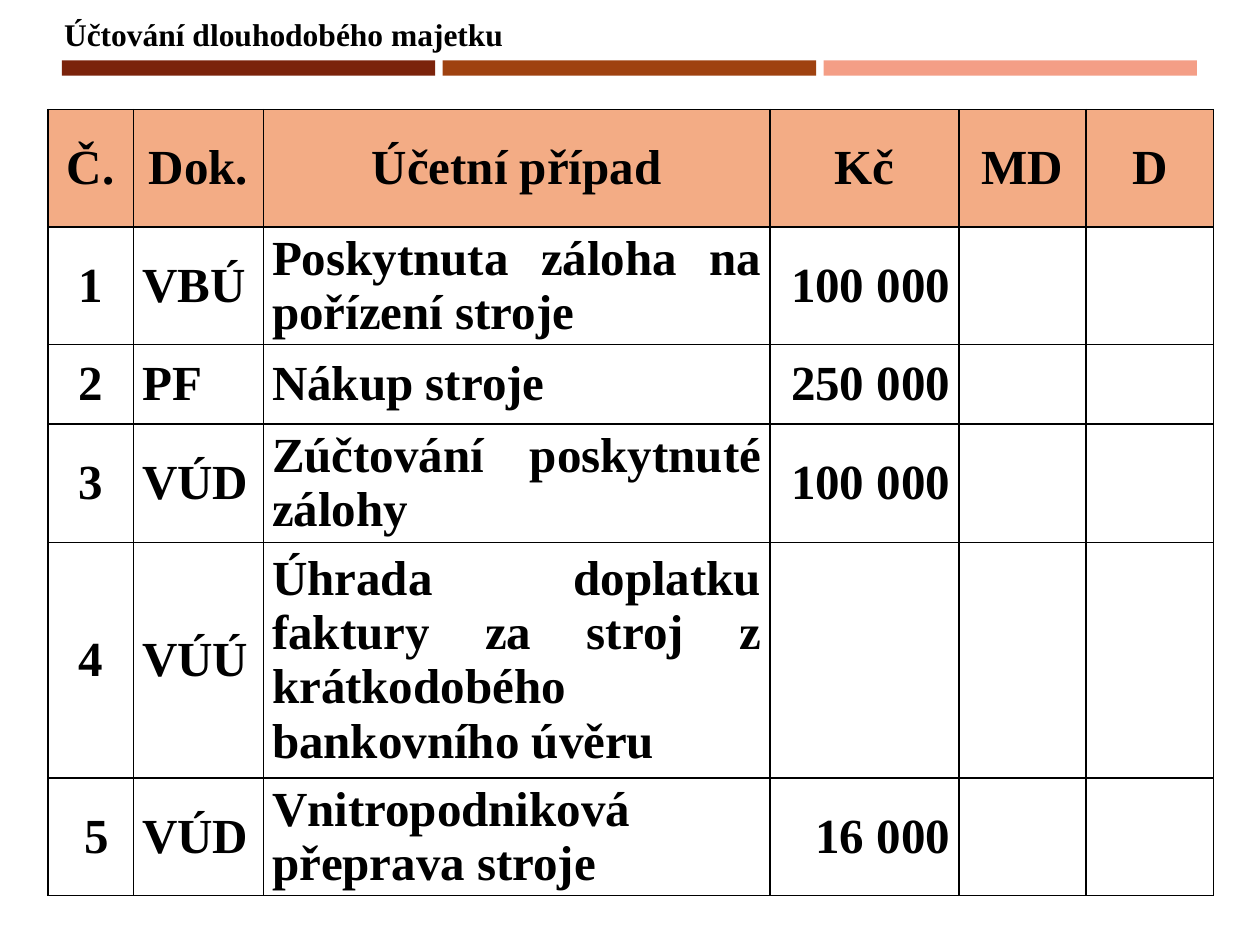
from lxml.etree import SubElement
from pptx import Presentation
from pptx.dml.color import RGBColor as Rgb
from pptx.enum.shapes import MSO_SHAPE as Form
from pptx.enum.text import MSO_ANCHOR as Anchor, MSO_AUTO_SIZE as Fit, PP_ALIGN as Al
from pptx.oxml.ns import qn
from pptx.util import Inches, Pt

COLORS = {
    "ink": "000000",
    "head": "F3AC85",
    "bars": ["7B230B", "9F4210", "F49E86"],
}
WIDTHS = [0.68, 1.03, 4.02, 1.5, 1.01, 1.01]
HEIGHTS = [0.93, 0.93, 0.63, 0.94, 1.87, 0.93]
ALIGNS = [Al.CENTER, Al.LEFT, Al.JUSTIFY, Al.RIGHT, Al.CENTER, Al.CENTER]
ROWS = [
    ["Č.", "Dok.", "Účetní případ", "Kč", "MD", "D"],
    ["1", "VBÚ", "Poskytnuta záloha na pořízení stroje", "100 000", "", ""],
    ["2", "PF", "Nákup stroje", "250 000", "", ""],
    ["3", "VÚD", "Zúčtování poskytnuté zálohy", "100 000", "", ""],
    ["4", "VÚÚ", "Úhrada doplatku faktury za stroj z krátkodobého bankovního úvěru",
     "", "", ""],
    [" 5", "VÚD", "Vnitropodniková přeprava stroje", "16 000", "", ""],
]


class Page:
    """Holds the text style and the current slide."""

    def __init__(self, slide, font="Times New Roman"):
        self.slide = slide
        self.font = font

    def add_text(self, para, text, size):
        run = para.add_run()
        run.text = text
        font = run.font
        font.name, font.size, font.bold = self.font, Pt(size), True
        font.color.rgb = Rgb.from_string(COLORS["ink"])

    def title(self, text, left, top, width, height):
        box = self.slide.shapes.add_textbox(
            Inches(left), Inches(top), Inches(width), Inches(height))
        frame = box.text_frame
        frame.word_wrap = False
        frame.auto_size = Fit.SHAPE_TO_FIT_TEXT
        self.add_text(frame.paragraphs[0], text, 18)

    def bars(self, left, top, width, height, gap):
        """Split the width into one bar per colour, with equal gaps."""
        hues = COLORS["bars"]
        step = (width + gap) / len(hues)
        for i, hue in enumerate(hues):
            bar = self.slide.shapes.add_shape(
                Form.RECTANGLE, Inches(left + i * step), Inches(top),
                Inches(step - gap), Inches(height))
            bar.shadow.inherit = False
            bar.fill.solid()
            bar.fill.fore_color.rgb = Rgb.from_string(hue)
            bar.line.fill.background()

    def border(self, cell):
        props = cell._tc.get_or_add_tcPr()
        for side in ("lnL", "lnR", "lnT", "lnB"):
            line = SubElement(props, qn("a:" + side), w=str(Pt(1)))
            fill = SubElement(line, qn("a:solidFill"))
            SubElement(fill, qn("a:srgbClr"), val=COLORS["ink"])

    def cell(self, cell, text, align, head):
        self.border(cell)
        if head:
            cell.fill.solid()
            cell.fill.fore_color.rgb = Rgb.from_string(COLORS["head"])
        else:
            cell.fill.background()
        cell.vertical_anchor = Anchor.MIDDLE
        cell.margin_left = cell.margin_right = Inches(0.07)
        cell.margin_top = cell.margin_bottom = 0
        para = cell.text_frame.paragraphs[0]
        para.alignment = Al.CENTER if head else align
        if text:
            self.add_text(para, text, 28)

    def table(self, rows, left, top):
        grid = self.slide.shapes.add_table(
            len(rows), len(WIDTHS), Inches(left), Inches(top),
            Inches(sum(WIDTHS)), Inches(sum(HEIGHTS))).table
        grid.first_row = grid.horz_banding = False
        for col, width in zip(grid.columns, WIDTHS):
            col.width = Inches(width)
        for r, texts in enumerate(rows):
            grid.rows[r].height = Inches(HEIGHTS[r])
            for c, text in enumerate(texts):
                self.cell(grid.cell(r, c), text, ALIGNS[c], r == 0)


def main():
    deck = Presentation()
    deck.slide_width, deck.slide_height = Inches(10), Inches(7.5)
    page = Page(deck.slides.add_slide(deck.slide_layouts[6]))
    page.bars(0.49, 0.48, 9.01, 0.12, gap=0.06)
    page.title("Účtování dlouhodobého majetku", 0.41, 0.07, 3.72, 0.4)
    page.table(ROWS, 0.38, 0.87)
    deck.save("out.pptx")


if __name__ == "__main__":
    main()
